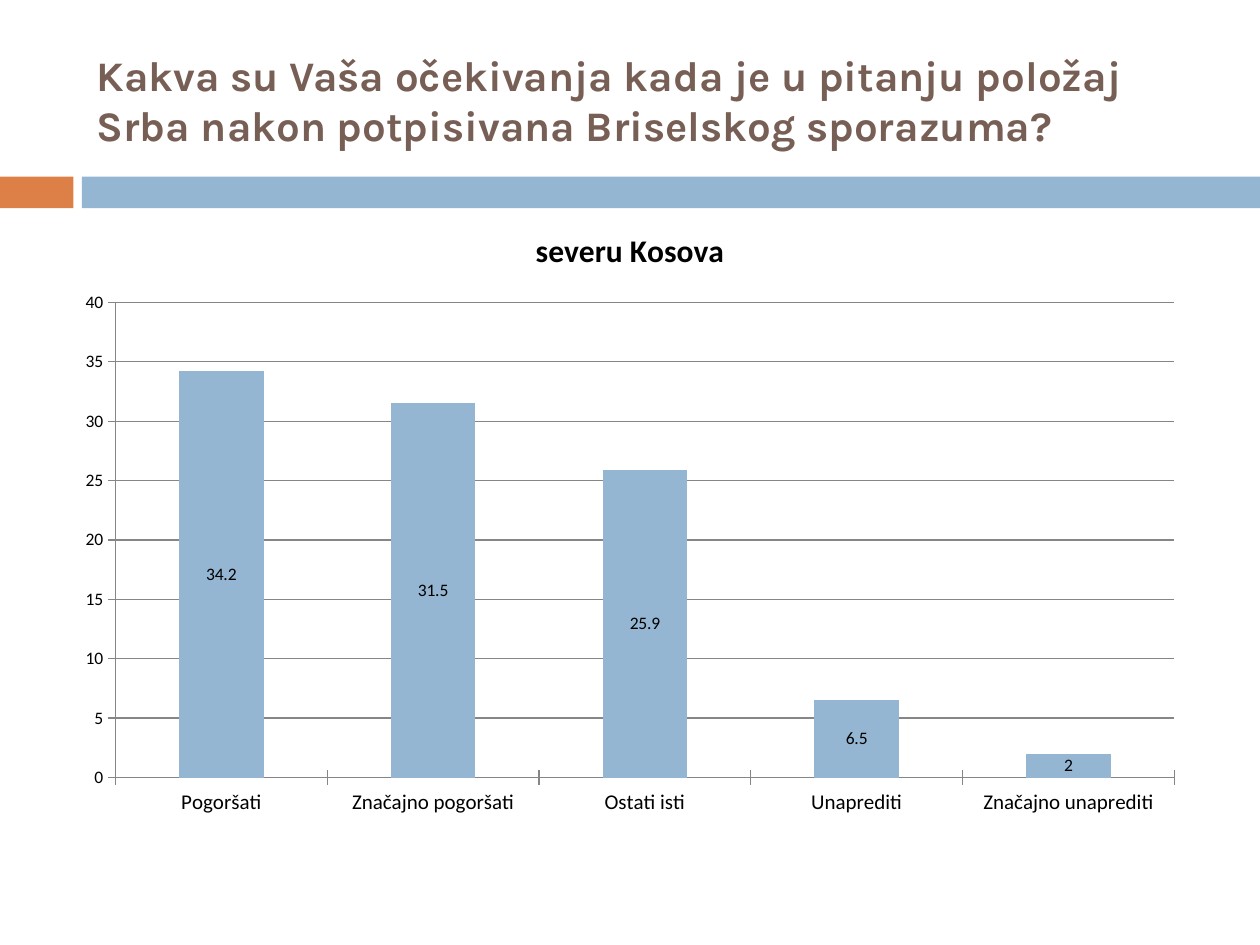
from dataclasses import dataclass

from pptx import Presentation
from pptx.chart.data import CategoryChartData
from pptx.dml.color import RGBColor
from pptx.enum.chart import XL_CHART_TYPE as ChartType
from pptx.enum.chart import XL_LABEL_POSITION as LabelPosition
from pptx.enum.chart import XL_TICK_MARK as TickMark
from pptx.enum.shapes import MSO_SHAPE as ShapeType
from pptx.enum.text import MSO_ANCHOR as Anchor
from pptx.slide import Slide
from pptx.util import Cm, Pt

BLUE, ORANGE, BROWN = "94B6D2", "DD8047", "775F55"
BLACK, GRAY = "000000", "868686"

TITLE = ("Kakva su Vaša očekivanja kada je u pitanju položaj "
         "Srba nakon potpisivana Briselskog sporazuma?")
SERIES_NAME = "severu Kosova"
EXPECTATIONS = {
    "Pogoršati": 34.2,
    "Značajno pogoršati": 31.5,
    "Ostati isti": 25.9,
    "Unaprediti": 6.5,
    "Značajno unaprediti": 2,
}


@dataclass(frozen=True)
class Band:
    left: float
    width: float
    color: str


BANDS = [Band(0, 1.48, ORANGE), Band(1.65, 23.75, BLUE)]


def apply_color(color_format, hex_color: str) -> None:
    color_format.rgb = RGBColor.from_string(hex_color)


def style_font(font, name: str, size: float, color: str, bold: bool = False) -> None:
    font.name, font.size, font.bold = name, Pt(size), bold
    apply_color(font.color, color)


def fill_solid(fill, hex_color: str) -> None:
    fill.solid()
    apply_color(fill.fore_color, hex_color)


def style_line(line) -> None:
    apply_color(line.color, GRAY)
    line.width = Pt(0.75)


def add_band(slide: Slide, band: Band) -> None:
    shape = slide.shapes.add_shape(ShapeType.RECTANGLE, Cm(band.left), Cm(3.56),
                                   Cm(band.width), Cm(0.64))
    shape.shadow.inherit = False
    fill_solid(shape.fill, band.color)
    shape.line.fill.background()


def add_title(slide: Slide) -> None:
    box = slide.shapes.add_textbox(Cm(1.7), Cm(0.64), Cm(22.66), Cm(2.74))
    frame = box.text_frame
    frame.word_wrap = True
    frame.vertical_anchor = Anchor.MIDDLE
    paragraph = frame.paragraphs[0]
    paragraph.text = TITLE
    style_font(paragraph.font, "Karla", 24, BROWN, bold=True)


def add_expectations_chart(slide: Slide) -> None:
    data = CategoryChartData()
    data.categories = list(EXPECTATIONS)
    data.add_series(SERIES_NAME, list(EXPECTATIONS.values()))
    chart = slide.shapes.add_chart(ChartType.COLUMN_STACKED, Cm(1.27), Cm(4.11),
                                   Cm(22.86), Cm(12.57), data).chart
    style_font(chart.font, "Calibri", 10, BLACK)
    chart.has_legend = False
    chart.has_title = True
    heading = chart.chart_title.text_frame.paragraphs[0]
    heading.text = SERIES_NAME
    style_font(heading.font, "Calibri", 18, BLACK, bold=True)

    # Axes
    for axis, size in ((chart.category_axis, 12), (chart.value_axis, 10)):
        axis.major_tick_mark = TickMark.CROSS
        axis.minor_tick_mark = TickMark.NONE
        style_line(axis.format.line)
        style_font(axis.tick_labels.font, "Calibri", size, BLACK)
    value_axis = chart.value_axis
    value_axis.minimum_scale, value_axis.maximum_scale = 0, 40
    value_axis.major_unit = 5
    value_axis.has_major_gridlines = True
    style_line(value_axis.major_gridlines.format.line)

    # Columns and their values
    plot = chart.plots[0]
    plot.gap_width, plot.overlap = 150, 100
    plot.vary_by_categories = False
    series = plot.series[0]
    fill_solid(series.format.fill, BLUE)
    labels = series.data_labels
    labels.show_value = True
    labels.position = LabelPosition.CENTER
    style_font(labels.font, "Calibri", 10, BLACK)


def main() -> None:
    presentation = Presentation()
    presentation.slide_width, presentation.slide_height = Cm(25.4), Cm(19.05)
    slide = presentation.slides.add_slide(presentation.slide_layouts[6])
    fill_solid(slide.background.fill, "FFFFFF")
    for band in BANDS:
        add_band(slide, band)
    add_title(slide)
    add_expectations_chart(slide)
    presentation.save("out.pptx")


if __name__ == "__main__":
    main()
